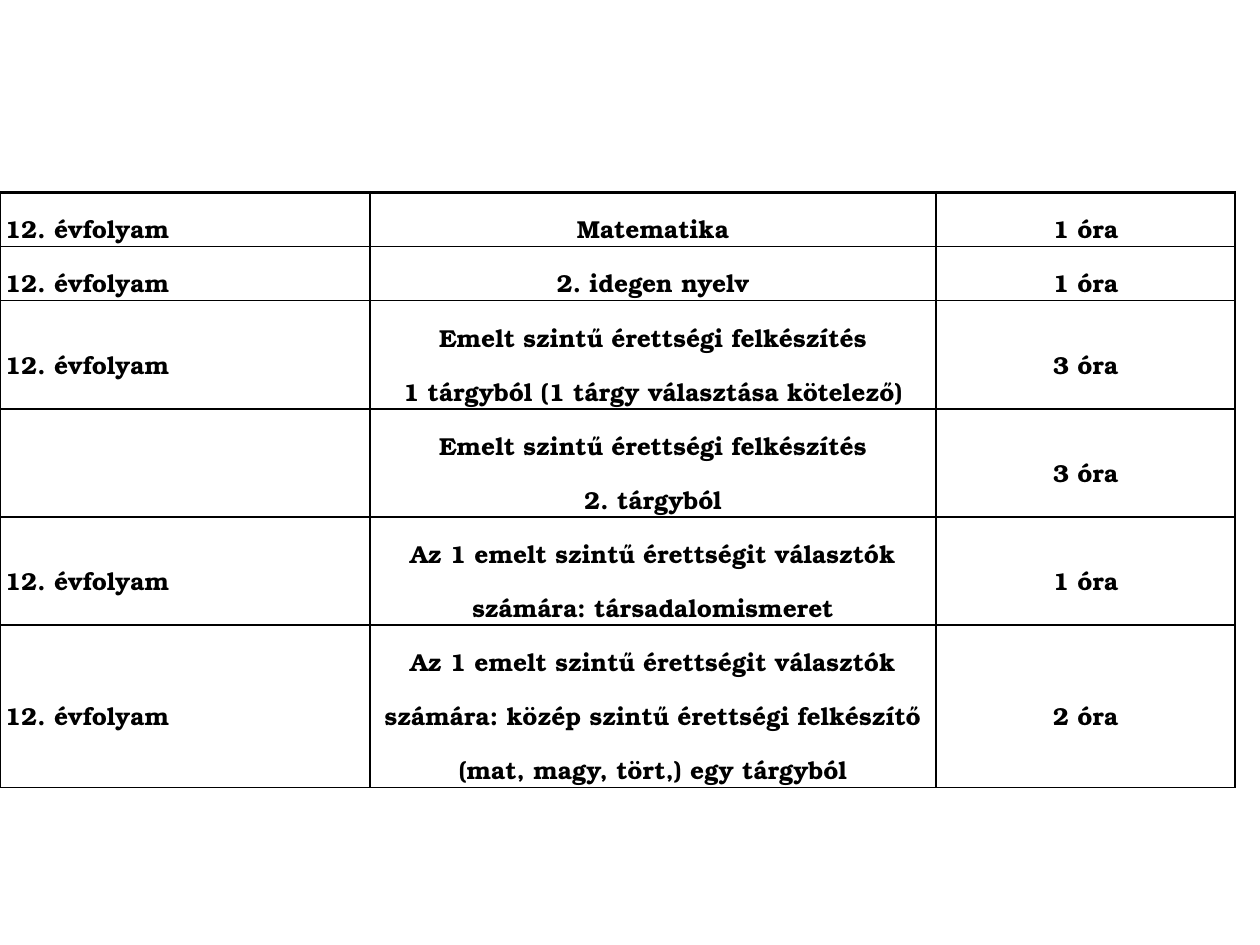
import pptx
import pptx.util
import pptx.dml.color
import pptx.enum.text
import pptx.oxml
import pptx.oxml.ns
from pptx.util import Cm

BLACK = pptx.dml.color.RGBColor(0, 0, 0)
FONT = "TeX Gyre Bonum"
ALIGN = pptx.enum.text.PP_ALIGN
LINE = 1.09  # height of one text line in cm

# Grade, subject, weekly hours, number of text lines
GRADE = "12. évfolyam"
ROWS = [
    (GRADE, "Matematika", "1 óra", 1),
    (GRADE, "2. idegen nyelv", "1 óra", 1),
    (GRADE, "Emelt szintű érettségi felkészítés\n"
            "1 tárgyból (1 tárgy választása kötelező)", "3 óra", 2),
    ("", "Emelt szintű érettségi felkészítés\n2. tárgyból", "3 óra", 2),
    (GRADE, "Az 1 emelt szintű érettségit választók számára: "
            "társadalomismeret", "1 óra", 2),
    (GRADE, "Az 1 emelt szintű érettségit választók számára: "
            "közép szintű érettségi felkészítő (mat, magy, tört,) "
            "egy tárgyból", "2 óra", 3),
]
WIDTHS = [7.46, 11.41, 6.03]


def add_edge(cell, side, width):
    props = cell._tc.get_or_add_tcPr()
    props.append(pptx.oxml.parse_xml(
        f'<a:ln{side} {pptx.oxml.ns.nsdecls("a")} w="{pptx.util.Pt(width)}">'
        f'<a:solidFill><a:srgbClr val="{BLACK}"/></a:solidFill></a:ln{side}>'))


# Slide
deck = pptx.Presentation()
deck.slide_width, deck.slide_height = Cm(25.4), Cm(19.05)
slide = deck.slides.add_slide(deck.slide_layouts[6])

# Table frame
high = LINE * sum(row[-1] for row in ROWS)
frame = slide.shapes.add_table(len(ROWS), len(WIDTHS), Cm(0), Cm(3.88),
                               Cm(sum(WIDTHS)), Cm(high))
table = frame.table
table.first_row = False
table.horz_banding = False
for col, width in zip(table.columns, WIDTHS):
    col.width = Cm(width)

# Cells
for r, (*texts, lines) in enumerate(ROWS):
    table.rows[r].height = Cm(LINE * lines)
    for c, text in enumerate(texts):
        cell = table.cell(r, c)
        cell.margin_left = cell.margin_right = Cm(0.1)
        cell.margin_top = cell.margin_bottom = Cm(0)
        cell.vertical_anchor = pptx.enum.text.MSO_ANCHOR.MIDDLE
        for side in "LRTB":
            add_edge(cell, side, 2.25 if r == 0 and side == "T" else 1)
        cell.fill.background()
        cell.text_frame.text = text
        for para in cell.text_frame.paragraphs:
            para.alignment = ALIGN.CENTER if c else ALIGN.JUSTIFY
            para.line_spacing = 1.5
            for run in para.runs:
                run.font.name = FONT
                run.font.size = pptx.util.Pt(14)
                run.font.bold = True
                run.font.color.rgb = BLACK

deck.save("out.pptx")
